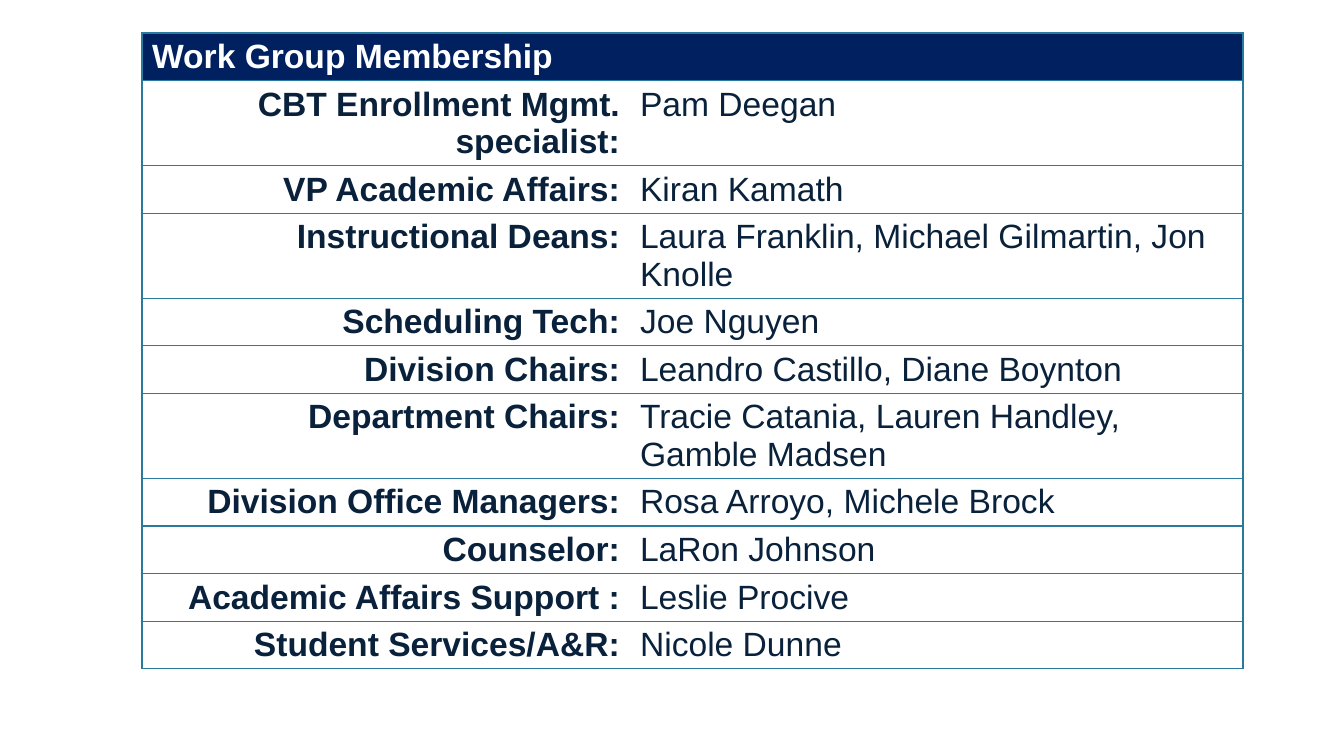
from lxml import etree
from pptx import Presentation
from pptx.dml.color import RGBColor
from pptx.enum.text import PP_ALIGN
from pptx.oxml.ns import qn
from pptx.util import Pt

LEFT, RIGHT = PP_ALIGN.LEFT, PP_ALIGN.RIGHT
PX = 914400 / 100.8
NAVY, INK, WHITE, RULE = "002060", "09213B", "FFFFFF", "287A9E"


def write(cell, text, color=INK, bold=False, align=LEFT, size=24):
    paragraph = cell.text_frame.paragraphs[0]
    paragraph.alignment = align
    run = paragraph.add_run()
    run.text = text
    run.font.name = "Arial"
    run.font.size = Pt(size)
    run.font.bold = bold
    run.font.color.rgb = RGBColor.from_string(color)


def style_cell(cell, fill, outer_side):
    """Rule every side but the one between the two columns."""
    properties = cell._tc.get_or_add_tcPr()
    for side in ("L", "R", "T", "B"):
        line = etree.SubElement(properties, qn(f"a:ln{side}"), w=str(Pt(1)))
        if side in (outer_side, "T", "B"):
            solid = etree.SubElement(line, qn("a:solidFill"))
            etree.SubElement(solid, qn("a:srgbClr"), val=RULE)
        else:
            etree.SubElement(line, qn("a:noFill"))
    cell.fill.solid()
    cell.fill.fore_color.rgb = RGBColor.from_string(fill)


# Slide
presentation = Presentation()
presentation.slide_width = round(1344 * PX)
presentation.slide_height = round(756 * PX)
slide = presentation.slides.add_slide(presentation.slide_layouts[6])

# Roles, members and the lines each row takes
members = [
    ("CBT Enrollment Mgmt. specialist:", "Pam Deegan", 2),
    ("VP Academic Affairs:", "Kiran Kamath", 1),
    ("Instructional Deans:", "Laura Franklin, Michael Gilmartin, Jon Knolle", 2),
    ("Scheduling Tech:", "Joe Nguyen", 1),
    ("Division Chairs:", "Leandro Castillo, Diane Boynton", 1),
    ("Department Chairs:", "Tracie Catania, Lauren Handley, Gamble Madsen", 2),
    ("Division Office Managers:", "Rosa Arroyo, Michele Brock", 1),
    ("Counselor:", "LaRon Johnson", 1),
    ("Academic Affairs Support :", "Leslie Procive", 1),
    ("Student Services/A&R:", "Nicole Dunne", 1),
]
row_heights = [47] + [10 + 37 * lines for _, _, lines in members]
column_widths = [488, 613]

# Table grid
membership = slide.shapes.add_table(
    len(row_heights), 2, round(142 * PX), round(33 * PX),
    round(sum(column_widths) * PX), round(sum(row_heights) * PX)).table
membership.horz_banding = False
for column, width in zip(membership.columns, column_widths):
    column.width = round(width * PX)
for index, (row, height) in enumerate(zip(membership.rows, row_heights)):
    row.height = round(height * PX)
    for cell, outer_side in zip(row.cells, ("L", "R")):
        style_cell(cell, WHITE if index else NAVY, outer_side)

# Heading and members
write(membership.cell(0, 0), "Work Group Membership", color=WHITE, bold=True)
for index, (role, names, _) in enumerate(members, start=1):
    write(membership.cell(index, 0), role, bold=True, align=RIGHT)
    write(membership.cell(index, 1), names)

presentation.save("out.pptx")
